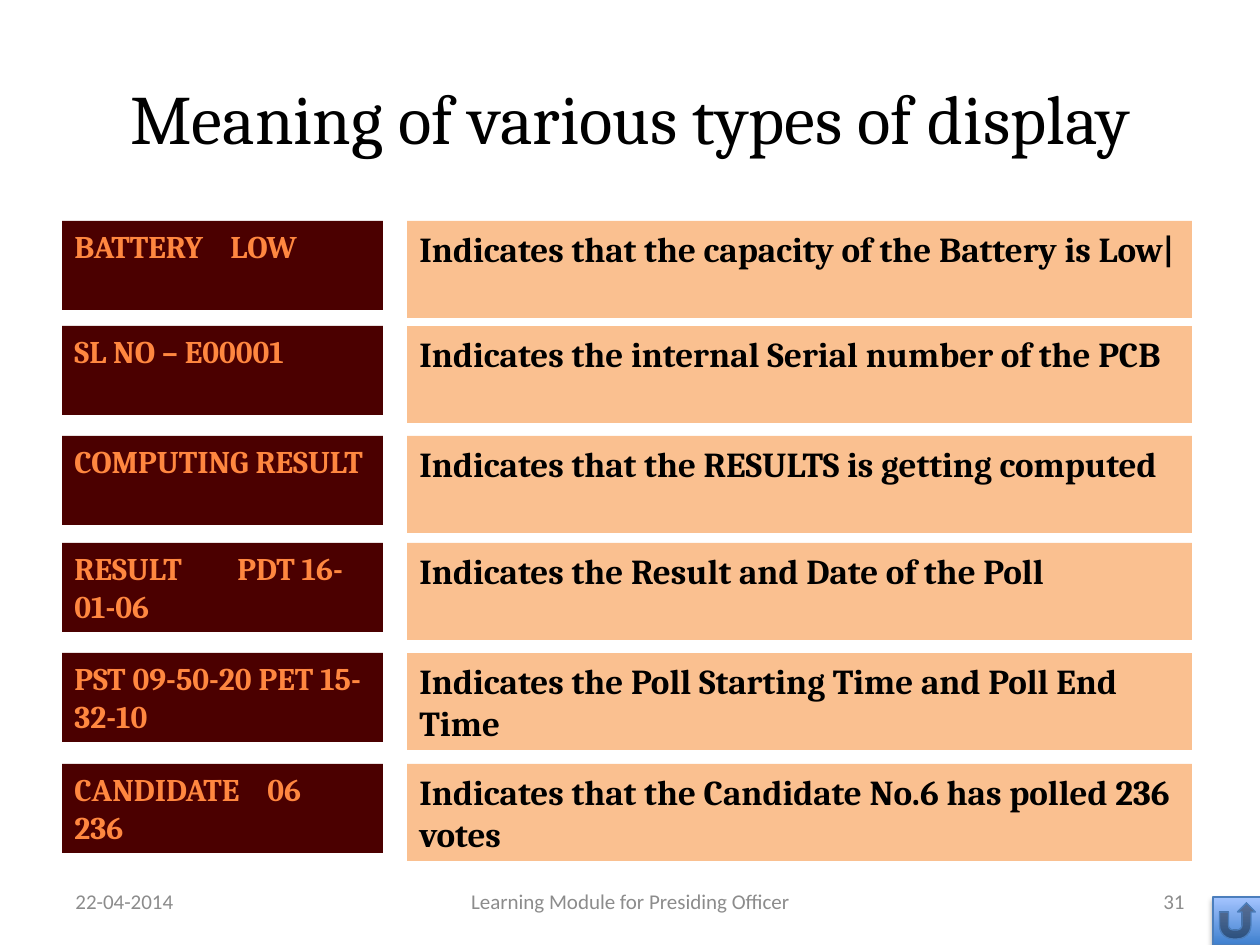
from dataclasses import dataclass

from lxml import etree
from pptx import Presentation
from pptx.dml.color import RGBColor
from pptx.enum.shapes import MSO_SHAPE
from pptx.enum.text import MSO_ANCHOR, PP_ALIGN
from pptx.oxml.ns import qn
from pptx.util import Emu, Pt

LEFT, CENTER, RIGHT = PP_ALIGN.LEFT, PP_ALIGN.CENTER, PP_ALIGN.RIGHT
TOP, MIDDLE = MSO_ANCHOR.TOP, MSO_ANCHOR.MIDDLE
RECTANGLE, RETURN_BUTTON = MSO_SHAPE.RECTANGLE, MSO_SHAPE.ACTION_BUTTON_RETURN


@dataclass(frozen=True)
class Theme:
    heading_font: str = "Cambria"
    footer_font: str = "Calibri"
    title_size: float = 39.6
    display_size: int = 18
    meaning_size: int = 20
    footer_size: int = 12
    ink: str = "000000"
    footer_ink: str = "8C8C8C"
    display_fill: str = "4B0000"
    display_ink: str = "FF8740"
    meaning_fill: str = "FAC090"
    button_dark: str = "3F80CE"
    button_light: str = "A4C4FF"
    button_line: str = "4B7EBC"


THEME = Theme()

TITLE = "Meaning of various types of display"

# top, display text, tab stop inside the display (px), meaning
ROWS = [
    (221, "BATTERY\tLOW", 156, "Indicates that the capacity of the Battery is Low|"),
    (326, "SL NO – E00001", None, "Indicates the internal Serial number of the PCB"),
    (436, "COMPUTING RESULT", None, "Indicates that the RESULTS is getting computed"),
    (543, "RESULT\tPDT 16-01-06", 163, "Indicates the Result and Date of the Poll"),
    (653, "PST 09-50-20 PET 15-32-10", None,
     "Indicates the Poll Starting Time and Poll End Time"),
    (764, "CANDIDATE\t06\v236", 193,
     "Indicates that the Candidate No.6 has polled 236 votes"),
]

# left, width, text, alignment
FOOTER = [
    (63, 294, "22-04-2014", LEFT),
    (431, 399, "Learning Module for Presiding Officer", CENTER),
    (903, 294, "31", RIGHT),
]

SLIDE_SIZE = (1260, 945)
TITLE_BOX = (63, 38, 1134, 157)
DISPLAY_LEFT, DISPLAY_SIZE = 62, (321, 89)
MEANING_LEFT, MEANING_SIZE = 407, (785, 97)
FOOTER_TOP, FOOTER_HEIGHT = 876, 50
BUTTON_BOX = (1213, 897, 49, 48)


def px(value):
    return Emu(round(value * 914400 / 126))


def color(code):
    return RGBColor.from_string(code)


def write(shape, text, *, size, ink, font=THEME.heading_font, bold=False,
          align=LEFT, anchor=TOP, tab=None):
    frame = shape.text_frame
    frame.word_wrap = True
    frame.vertical_anchor = anchor
    paragraph = frame.paragraphs[0]
    paragraph.text = text
    paragraph.alignment = align
    for run in paragraph.runs:
        run.font.name = font
        run.font.size = Pt(size)
        run.font.bold = bold
        run.font.color.rgb = color(ink)
    if tab:
        stops = etree.SubElement(paragraph._p.get_or_add_pPr(), qn("a:tabLst"))
        etree.SubElement(stops, qn("a:tab"), pos=str(px(tab)), algn="l")


def add_text(slide, box, text, **style):
    write(slide.shapes.add_textbox(*map(px, box)), text, anchor=MIDDLE, **style)


def add_panel(slide, box, fill, text, **style):
    panel = slide.shapes.add_shape(RECTANGLE, *map(px, box))
    panel.shadow.inherit = False
    panel.fill.solid()
    panel.fill.fore_color.rgb = color(fill)
    panel.line.fill.background()
    write(panel, text, bold=True, **style)


def add_return_button(slide):
    button = slide.shapes.add_shape(RETURN_BUTTON, *map(px, BUTTON_BOX))
    button.fill.gradient()
    button.fill.gradient_angle = 90
    shades = (THEME.button_dark, THEME.button_light)
    for stop, shade in zip(button.fill.gradient_stops, shades):
        stop.color.rgb = color(shade)
    button.line.color.rgb = color(THEME.button_line)
    button.line.width = Pt(0.75)
    button.shadow.inherit = False
    effects = button._element.spPr.find(qn("a:effectLst"))
    shadow = etree.SubElement(effects, qn("a:outerShdw"), blurRad=str(Pt(3.1)),
                              dist=str(Pt(1.8)), dir="5400000", rotWithShape="0")
    shade = etree.SubElement(shadow, qn("a:srgbClr"), val=THEME.ink)
    etree.SubElement(shade, qn("a:alpha"), val="35000")


def main():
    deck = Presentation()
    deck.slide_width, deck.slide_height = map(px, SLIDE_SIZE)
    slide = deck.slides.add_slide(deck.slide_layouts[6])

    add_text(slide, TITLE_BOX, TITLE, size=THEME.title_size, ink=THEME.ink, align=CENTER)
    for left, width, text, align in FOOTER:
        add_text(slide, (left, FOOTER_TOP, width, FOOTER_HEIGHT), text, align=align,
                 size=THEME.footer_size, ink=THEME.footer_ink, font=THEME.footer_font)
    for top, display, tab, meaning in ROWS:
        add_panel(slide, (DISPLAY_LEFT, top, *DISPLAY_SIZE), THEME.display_fill, display,
                  size=THEME.display_size, ink=THEME.display_ink, tab=tab)
        add_panel(slide, (MEANING_LEFT, top, *MEANING_SIZE), THEME.meaning_fill, meaning,
                  size=THEME.meaning_size, ink=THEME.ink)
    add_return_button(slide)

    deck.save("out.pptx")


if __name__ == "__main__":
    main()
